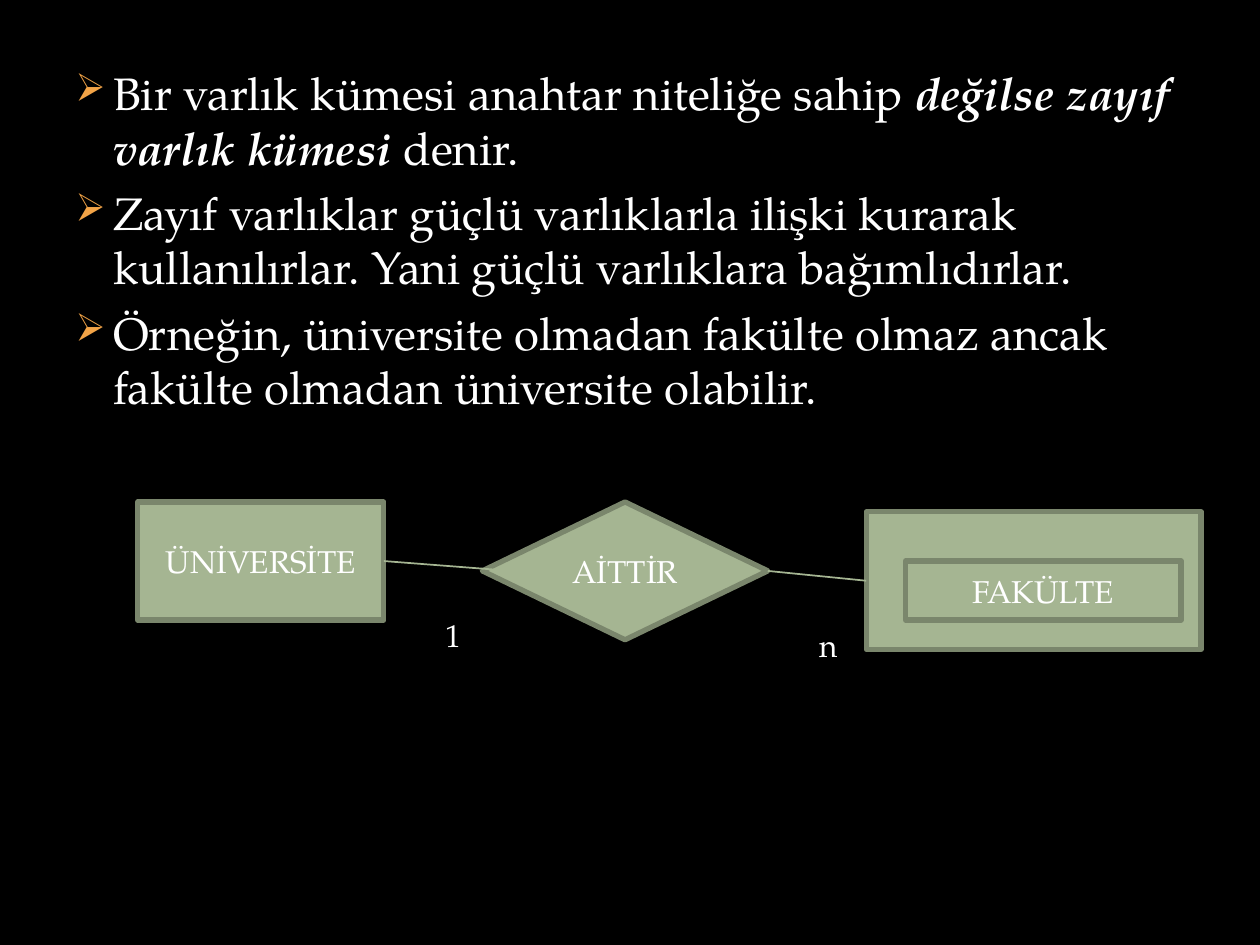
from lxml import etree
from pptx import Presentation
from pptx import util as u
from pptx.dml.color import RGBColor
from pptx.enum import shapes, text
from pptx.oxml.ns import qn

COLORS = {"bg": "000000", "text": "FFFFFF", "bullet": "F3A447",
          "fill": "A5B592", "edge": "7A866C"}
FONT = "TeX Gyre Pagella"
CELL = u.Inches(10) / 128  # the slide is a grid of 128 columns by 96 rows

# Each paragraph is a list of (text, emphasised) runs
BULLETS = [
    [("Bir varlık kümesi anahtar niteliğe sahip ", False),
     ("değilse zayıf varlık kümesi ", True), ("denir.", False)],
    [("Zayıf varlıklar güçlü varlıklarla ilişki kurarak kullanılırlar. "
      "Yani güçlü varlıklara bağımlıdırlar.", False)],
    [("Örneğin, üniversite olmadan fakülte olmaz ancak "
      "fakülte olmadan üniversite olabilir.", False)],
]


def grid(*cells):
    return [u.Emu(round(c * CELL)) for c in cells]


def rgb(name):
    return RGBColor.from_string(COLORS[name])


def style(r, size, strong=False):
    r.font.name, r.font.size = FONT, u.Pt(size)
    r.font.color.rgb = rgb("text")
    r.font.bold = r.font.italic = strong


def add_bullet(p):
    pPr = p._p.get_or_add_pPr()
    pPr.set("marL", str(u.Inches(0.3)))
    pPr.set("indent", str(-u.Inches(0.3)))
    color = etree.SubElement(pPr, qn("a:buClr"))
    etree.SubElement(color, qn("a:srgbClr"), val=COLORS["bullet"])
    etree.SubElement(pPr, qn("a:buSzPct"), val="85000")
    etree.SubElement(pPr, qn("a:buChar"), char="➢")


def add_body(s, *box):
    tf = s.shapes.add_textbox(*grid(*box)).text_frame
    tf.word_wrap = True
    for i, runs in enumerate(BULLETS):
        p = tf.add_paragraph() if i else tf.paragraphs[0]
        p.space_before = u.Pt(6)
        add_bullet(p)
        for words, strong in runs:
            r = p.add_run()
            r.text = words
            style(r, 26, strong)


def add_node(s, kind, label, *box):
    sp = s.shapes.add_shape(kind, *grid(*box))
    sp.shadow.inherit = False
    sp.fill.solid()
    sp.fill.fore_color.rgb = rgb("fill")
    sp.line.color.rgb = rgb("edge")
    sp.line.width = u.Pt(3)
    etree.SubElement(sp.line._get_or_add_ln(), qn("a:round"))
    if label:
        tf = sp.text_frame
        tf.text = label
        tf.vertical_anchor = text.MSO_ANCHOR.MIDDLE
        p = tf.paragraphs[0]
        p.alignment = text.PP_ALIGN.CENTER
        style(p.runs[0], 18)


def add_link(s, *ends):
    sp = s.shapes.add_connector(shapes.MSO_CONNECTOR.STRAIGHT, *grid(*ends))
    sp.line.color.rgb = rgb("fill")
    sp.line.width = u.Pt(1)
    etree.SubElement(sp._element.spPr, qn("a:effectLst"))


def add_cardinality(s, label, *box):
    tf = s.shapes.add_textbox(*grid(*box)).text_frame
    tf.text = label
    tf.word_wrap = False
    tf.auto_size = text.MSO_AUTO_SIZE.SHAPE_TO_FIT_TEXT
    style(tf.paragraphs[0].runs[0], 18)


def main():
    prs = Presentation()
    prs.slide_width, prs.slide_height = grid(128, 96)
    s = prs.slides.add_slide(prs.slide_layouts[6])
    s.background.fill.solid()
    s.background.fill.fore_color.rgb = rgb("bg")

    # Definition of weak entity sets
    add_body(s, 6.4, 6, 115.2, 79.4)

    # Entities and relationship; the weak entity has a double frame
    rect = shapes.MSO_SHAPE.RECTANGLE
    add_node(s, rect, "ÜNİVERSİTE", 14, 51, 25, 12)
    add_node(s, shapes.MSO_SHAPE.FLOWCHART_DECISION, "AİTTİR", 49, 51, 29, 14)
    add_node(s, rect, "", 88, 52, 34, 14)
    add_node(s, rect, "FAKÜLTE", 92, 57, 28, 6)

    # Links with their cardinalities
    add_link(s, 39, 57, 52, 58)
    add_link(s, 78, 58, 88, 59)
    add_cardinality(s, "1", 44, 62, 3.6, 5.1)
    add_cardinality(s, "n", 82, 63, 4.5, 5.1)

    prs.save("out.pptx")


if __name__ == "__main__":
    main()
